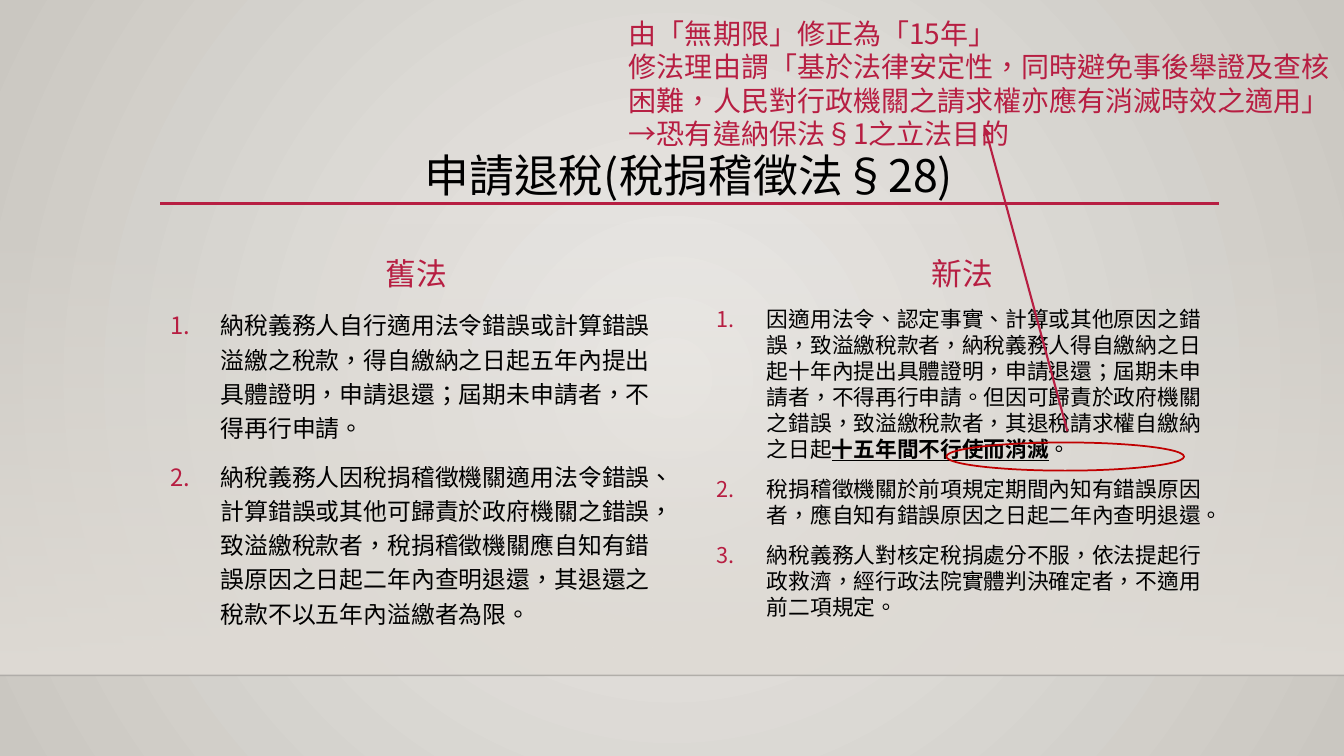
from lxml.etree import SubElement, fromstring
from pptx import Presentation
from pptx.dml.color import RGBColor
from pptx.enum.shapes import MSO_CONNECTOR, MSO_SHAPE
from pptx.enum.text import MSO_ANCHOR, PP_ALIGN
from pptx.oxml.ns import qn
from pptx.util import Cm, Pt

FONT = "Noto Sans CJK SC"
NS = "http://schemas.openxmlformats.org/drawingml/2006/main"
HUE = {"red": "B71E42", "ring": "C00000", "ink": "000000", "edge": "000001",
       "glow": "ECEAE7", "rim": "CAC7C1", "wall": "DFDBD5"}

deck = Presentation()
deck.slide_width, deck.slide_height = Cm(33.87), Cm(19.05)
slide = deck.slides.add_slide(deck.slide_layouts[6])


def add_line(x1, y1, x2, y2, hue, width):
    line = slide.shapes.add_connector(
        MSO_CONNECTOR.STRAIGHT, Cm(x1), Cm(y1), Cm(x2), Cm(y2))
    line.line.color.rgb = RGBColor.from_string(HUE[hue])
    line.line.width = Pt(width)
    SubElement(line._element.spPr, qn("a:effectLst"))
    return line


def add_text(box, paras, size, hue, align=PP_ALIGN.LEFT, anchor=MSO_ANCHOR.TOP,
             space=1, listed=False):
    frame = slide.shapes.add_textbox(*[Cm(v) for v in box]).text_frame
    frame.word_wrap = True
    frame.vertical_anchor = anchor
    for i, runs in enumerate(paras):
        para = frame.paragraphs[0] if i == 0 else frame.add_paragraph()
        para.alignment = align
        para.line_spacing = space
        if listed:
            para.space_before = Pt(10 if i else 0)
            props = para._p.get_or_add_pPr()
            props.set("marL", str(Cm(1.27)))
            props.set("indent", str(-Cm(1.27)))
            tint = SubElement(props, qn("a:buClr"))
            SubElement(tint, qn("a:srgbClr"), val=HUE["red"])
            SubElement(props, qn("a:buFont"), typeface=FONT)
            SubElement(props, qn("a:buAutoNum"), type="arabicPeriod")
        for j, words in enumerate(runs):
            run = para.add_run()
            run.text = words
            font = run.font
            font.size = Pt(size)
            font.name = FONT
            font.color.rgb = RGBColor.from_string(HUE[hue])
            if j == 1:
                font.bold = font.underline = True
            mark = run._r.get_or_add_rPr()
            mark.set("lang", "zh-TW")
            SubElement(mark, qn("a:ea"), typeface=FONT)


back = slide.background.fill
back.gradient()
grad = back._xPr.find(qn("a:gradFill"))
back._xPr.replace(grad, fromstring(
    f'<a:gradFill xmlns:a="{NS}" rotWithShape="1"><a:gsLst>'
    f'<a:gs pos="0"><a:srgbClr val="{HUE["glow"]}"/></a:gs>'
    f'<a:gs pos="100000"><a:srgbClr val="{HUE["rim"]}"/></a:gs></a:gsLst>'
    '<a:path path="circle"><a:fillToRect l="50000" t="50000" r="50000" b="50000"/>'
    '</a:path></a:gradFill>'))

wall = slide.shapes.add_shape(MSO_SHAPE.RECTANGLE, 0, Cm(5.61), Cm(33.87), Cm(11.41))
wall.shadow.inherit = False
wall.line.fill.background()
wall.fill.gradient()
wall.fill.gradient_angle = 270
for stop, alpha in zip(wall.fill.gradient_stops, (0, 100000)):
    stop.color.rgb = RGBColor.from_string(HUE["wall"])
    stop.position = alpha / 100000
    tint = stop._gs.find(qn("a:srgbClr"))
    SubElement(tint, qn("a:alpha"), val=str(alpha))

floor = add_line(0, 17.02, 33.87, 17.02, "edge", 1)
tint = floor.line._ln.find(".//" + qn("a:srgbClr"))
SubElement(tint, qn("a:alpha"), val="20000")
add_line(4.04, 5.13, 30.73, 5.13, "red", 2.5)

add_text((4.01, 2.24, 26.7, 2.95), [["申請退稅(稅捐稽徵法§28)"]], 32, "ink",
         PP_ALIGN.CENTER, space=2)

old = [
    ["納稅義務人自行適用法令錯誤或計算錯誤溢繳之稅款，得自繳納之日起五年內提出具體證明，申請退還；屆期未申請者，不得再行申請。"],
    ["納稅義務人因稅捐稽徵機關適用法令錯誤、計算錯誤或其他可歸責於政府機關之錯誤，致溢繳稅款者，稅捐稽徵機關應自知有錯誤原因之日起二年內查明退還，其退還之稅款不以五年內溢繳者為限。"],
]
new = [
    ["因適用法令、認定事實、計算或其他原因之錯誤，致溢繳稅款者，納稅義務人得自繳納之日起十年內提出具體證明，申請退還；屆期未申請者，不得再行申請。但因可歸責於政府機關之錯誤，致溢繳稅款者，其退稅請求權自繳納之日起",
     "十五年間不行使而消滅", "。"],
    ["稅捐稽徵機關於前項規定期間內知有錯誤原因者，應自知有錯誤原因之日起二年內查明退還。"],
    ["納稅義務人對核定稅捐處分不服，依法提起行政救濟，經行政法院實體判決確定者，不適用前二項規定。"],
]
for x, head, rules, size, space in ((4.04, "舊法", old, 17, 1.2),
                                    (17.81, "新法", new, 15.5, 1)):
    add_text((x, 5.23, 12.9, 2.24), [[head]], 22, "red",
             PP_ALIGN.CENTER, MSO_ANCHOR.BOTTOM)
    add_text((x, 7.57, 12.9, 9.19), rules, size, "ink", space=space, listed=True)

ring = slide.shapes.add_shape(MSO_SHAPE.OVAL, Cm(23.85), Cm(11.15), Cm(5.99), Cm(0.71))
ring.shadow.inherit = False
ring.fill.background()
ring.line.color.rgb = RGBColor.from_string(HUE["ring"])
ring.line.width = Pt(1.25)

arrow = add_line(26.9, 10.87, 24.82, 3.2, "red", 1.5)
SubElement(arrow.line._ln, qn("a:tailEnd"), type="triangle")

add_text((15.6, 0.28, 18.42, 3.68), [
    ["由「無期限」修正為「15年」"],
    ["修法理由謂「基於法律安定性，同時避免事後舉證及查核困難，人民對行政機關之請求權亦應有消滅時效之適用」"],
    ["→恐有違納保法§1之立法目的"],
], 20, "red")

deck.save("out.pptx")
